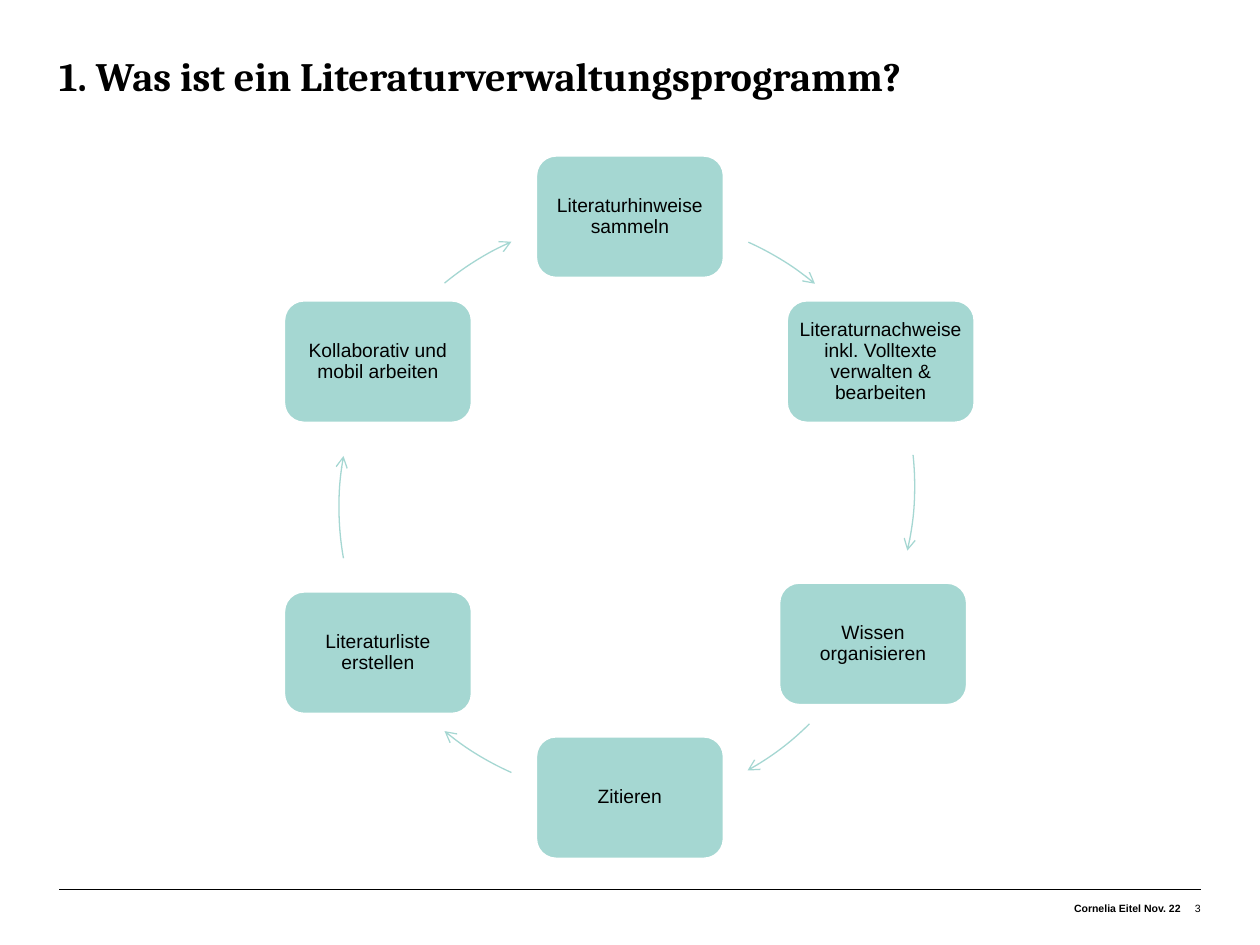
"""Build a slide showing the tasks of a reference manager as a cycle."""
from dataclasses import dataclass
from math import atan2, degrees

from lxml import etree
from pptx import Presentation
from pptx.dml.color import RGBColor
from pptx.enum.shapes import MSO_CONNECTOR, MSO_SHAPE
from pptx.enum.text import MSO_ANCHOR, MSO_AUTO_SIZE, PP_ALIGN
from pptx.oxml.ns import qn
from pptx.slide import Slide
from pptx.util import Inches, Pt

BLACK = RGBColor(0x00, 0x00, 0x00)
WHITE = RGBColor(0xFF, 0xFF, 0xFF)
MINT = RGBColor(0xA5, 0xD7, 0xD2)
ROUNDED, ARC = MSO_SHAPE.ROUNDED_RECTANGLE, MSO_SHAPE.ARC
STRAIGHT = MSO_CONNECTOR.STRAIGHT
LEFT, CENTER, RIGHT = PP_ALIGN.LEFT, PP_ALIGN.CENTER, PP_ALIGN.RIGHT
TOP, MIDDLE = MSO_ANCHOR.TOP, MSO_ANCHOR.MIDDLE
NO_AUTOFIT = MSO_AUTO_SIZE.NONE

STEP_WIDTH, STEP_HEIGHT = 1.5, 0.98
ORBIT = 4.61
MARGIN_LEFT, MARGIN_RIGHT = 0.47, 9.53


@dataclass(frozen=True)
class Step:
    label: str
    left: float
    top: float


@dataclass(frozen=True)
class CycleArrow:
    start: tuple[float, float]
    end: tuple[float, float]
    left: float = 2.69
    top: float = 1.72


STEPS = [
    Step("Literaturhinweise sammeln", 4.25, 1.23),
    Step("Literaturnachweise inkl. Volltexte verwalten & bearbeiten", 6.24, 2.38),
    Step("Wissen organisieren", 6.18, 4.62),
    Step("Zitieren", 4.25, 5.84),
    Step("Literaturliste erstellen", 2.25, 4.69),
    Step("Kollaborativ und mobil arbeiten", 2.25, 2.38),
]
ARROWS = [
    CycleArrow((5.94, 1.92), (6.47, 2.25)),
    CycleArrow((7.25, 3.61), (7.2, 4.37), 2.65, 1.55),
    CycleArrow((6.42, 5.74), (5.93, 6.11), 2.5, 1.8),
    CycleArrow((4.06, 6.13), (3.53, 5.8)),
    CycleArrow((2.73, 4.43), (2.73, 3.62)),
    CycleArrow((3.53, 2.25), (4.06, 1.92)),
]


def write(shape, text: str, size: float, align: PP_ALIGN, anchor: MSO_ANCHOR,
          inset: float = 0, inset_top: float = 0, font_name: str = "Arial",
          bold: bool = False, spacing=None) -> None:
    """Fill a shape with one formatted paragraph."""
    frame = shape.text_frame
    frame.word_wrap = True
    frame.auto_size = NO_AUTOFIT
    frame.vertical_anchor = anchor
    frame.margin_left = frame.margin_right = frame.margin_bottom = Inches(inset)
    frame.margin_top = Inches(inset_top)
    paragraph = frame.paragraphs[0]
    paragraph.text = text
    paragraph.alignment = align
    paragraph.line_spacing = spacing
    font = paragraph.font
    font.name, font.size, font.bold = font_name, Pt(size), bold
    font.color.rgb = BLACK


def draw_step(slide: Slide, step: Step) -> None:
    """Draw one rounded box of the cycle."""
    box = slide.shapes.add_shape(ROUNDED, Inches(step.left), Inches(step.top),
                                 Inches(STEP_WIDTH), Inches(STEP_HEIGHT))
    box.shadow.inherit = False
    box.fill.solid()
    box.fill.fore_color.rgb = MINT
    box.line.color.rgb = WHITE
    box.line.width = Pt(2)
    write(box, step.label, 11, CENTER, MIDDLE, 0.05, 0.05, spacing=0.9)


def draw_arrow(slide: Slide, arrow: CycleArrow) -> None:
    """Draw a clockwise arc between two points of its circle."""
    arc = slide.shapes.add_shape(ARC, Inches(arrow.left), Inches(arrow.top),
                                 Inches(ORBIT), Inches(ORBIT))
    center_x, center_y = arrow.left + ORBIT / 2, arrow.top + ORBIT / 2
    for index, (x, y) in enumerate((arrow.start, arrow.end)):
        angle = degrees(atan2(y - center_y, x - center_x)) % 360
        arc.adjustments[index] = angle * 0.6
    arc.shadow.inherit = False
    arc.fill.background()
    arc.line.color.rgb = MINT
    arc.line.width = Pt(0.75)
    outline = arc._element.spPr.find(qn("a:ln"))
    etree.SubElement(outline, qn("a:tailEnd"), type="arrow")


def draw_footer(slide: Slide) -> None:
    """Draw the rule, the author with date, and the page number."""
    rule = slide.shapes.add_connector(STRAIGHT, Inches(MARGIN_LEFT), Inches(7.06),
                                      Inches(MARGIN_RIGHT), Inches(7.06))
    rule.line.color.rgb = BLACK
    rule.line.width = Pt(0.25)
    etree.SubElement(rule._element.spPr, qn("a:effectLst"))
    for text, left, width, bold in (("Cornelia Eitel Nov. 22", 7.28, 2.09, True),
                                    ("3", 9.37, 0.16, False)):
        note = slide.shapes.add_textbox(Inches(left), Inches(7.14),
                                        Inches(width), Inches(0.2))
        write(note, text, 6, RIGHT, TOP, inset_top=0.02, bold=bold)


def main() -> None:
    """Assemble and save the slide."""
    presentation = Presentation()
    presentation.slide_width, presentation.slide_height = Inches(10), Inches(7.5)
    slide = presentation.slides.add_slide(presentation.slide_layouts[5])
    title = slide.shapes.title
    title.left, title.top = Inches(MARGIN_LEFT), Inches(0.44)
    title.width, title.height = Inches(MARGIN_RIGHT - MARGIN_LEFT), Inches(0.83)
    write(title, "1. Was ist ein Literaturverwaltungsprogramm?", 23, LEFT, TOP,
          font_name="Cambria", bold=True, spacing=Pt(25))
    for step, arrow in zip(STEPS, ARROWS):
        draw_step(slide, step)
        draw_arrow(slide, arrow)
    draw_footer(slide)
    presentation.save("out.pptx")


if __name__ == "__main__":
    main()
